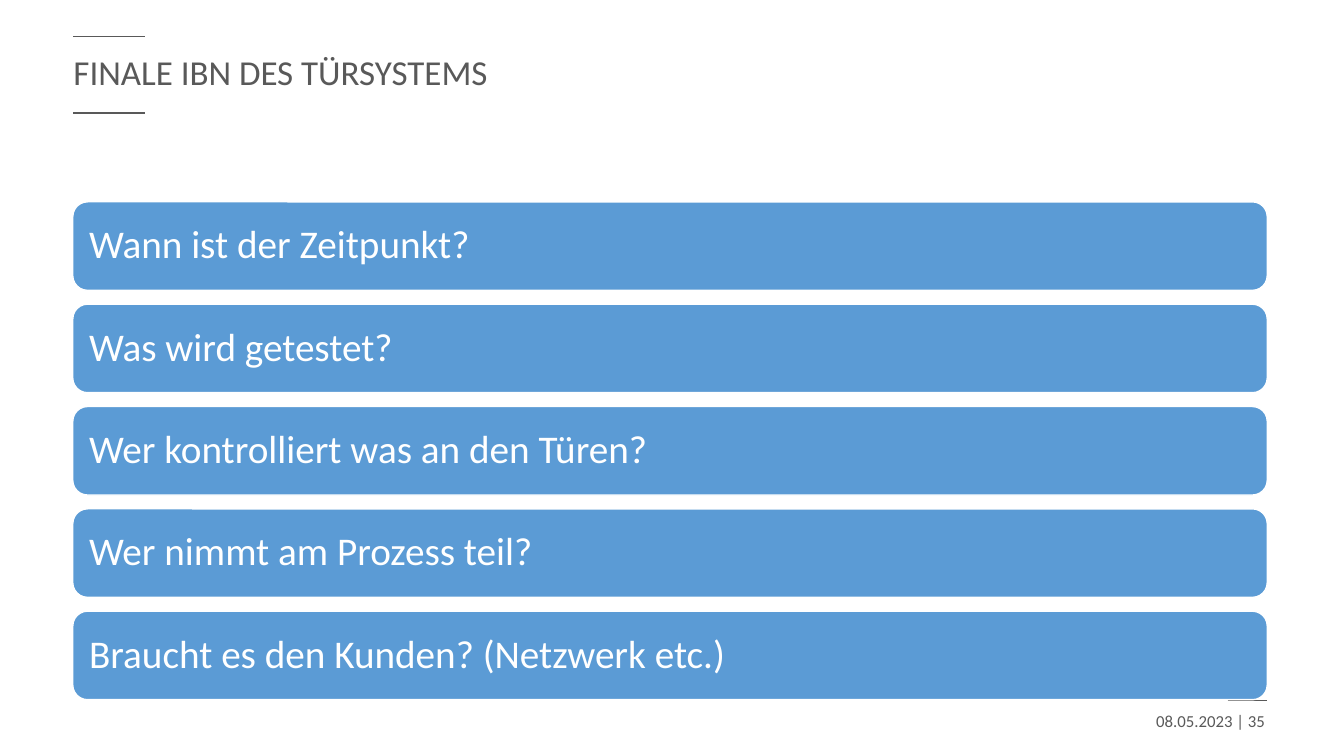
from pptx import Presentation
from pptx.dml.color import RGBColor
from pptx.enum.shapes import MSO_CONNECTOR, MSO_SHAPE
from pptx.enum.text import MSO_ANCHOR, PP_ALIGN
from pptx.oxml.ns import qn
from pptx.util import Pt
from lxml.etree import SubElement

TITLE = "FINALE IBN DES TÜRSYSTEMS"
FOOTER = "08.05.2023 | 35"
QUESTIONS = [
    "Wann ist der Zeitpunkt?",
    "Was wird getestet?",
    "Wer kontrolliert was an den Türen?",
    "Wer nimmt am Prozess teil?",
    "Braucht es den Kunden? (Netzwerk etc.)",
]
GREY, BLUE, WHITE = "595959", "5B9BD5", "FFFFFF"

# Lengths in points
SLIDE_W, SLIDE_H = 960, 540
RULES = [(876.9, 905, 500.4), (52.5, 103.7, 80.6), (52.5, 103.7, 25.9)]  # x1, x2, y
TITLE_BOX = (45.4, 25.9, 720.7, 54.7)
FOOTER_BOX = (694.8, 500.4, 216, 28.8)
BAR_X, BAR_Y, BAR_W, BAR_H, BAR_PITCH = 52, 144.2, 853.2, 63.2, 73.1
BAR_INSET = 8.6


def color(value):
    return RGBColor.from_string(value)


def write(sp, text, size, hue, align=PP_ALIGN.LEFT, spacing=1.0, **frame):
    tf = sp.text_frame
    frame = {"word_wrap": True, "vertical_anchor": MSO_ANCHOR.MIDDLE, **frame}
    for name, value in frame.items():
        setattr(tf, name, value)
    p = tf.paragraphs[0]
    p.alignment, p.line_spacing = align, spacing
    r = p.add_run()
    r.text = text
    for name, value in {"name": "Calibri", "size": Pt(size)}.items():
        setattr(r.font, name, value)
    r.font.color.rgb = color(hue)


def add_text(s, box, *args, **fmt):
    write(s.shapes.add_textbox(*map(Pt, box)), *args, **fmt)


def add_rule(s, x1, x2, y):
    line = s.shapes.add_connector(MSO_CONNECTOR.STRAIGHT, Pt(x1), Pt(y), Pt(x2), Pt(y))
    line.line.color.rgb = color(GREY)
    line.line.width = Pt(1)
    SubElement(line._element.spPr, qn("a:effectLst"))


def add_bar(s, y, text):
    sp = s.shapes.add_shape(MSO_SHAPE.ROUNDED_RECTANGLE, *map(Pt, (BAR_X, y, BAR_W, BAR_H)))
    sp.shadow.inherit = False
    sp.fill.solid()
    sp.fill.fore_color.rgb = color(BLUE)
    sp.line.color.rgb = color(WHITE)
    sp.line.width = Pt(1)
    margins = {f"margin_{side}": Pt(BAR_INSET) for side in ("left", "top", "right", "bottom")}
    write(sp, text, 28, WHITE, spacing=0.9, **margins)


def main():
    prs = Presentation()
    prs.slide_width, prs.slide_height = Pt(SLIDE_W), Pt(SLIDE_H)
    s = prs.slides.add_slide(prs.slide_layouts[6])
    for rule in RULES:
        add_rule(s, *rule)
    add_text(s, FOOTER_BOX, FOOTER, 12, GREY, align=PP_ALIGN.RIGHT)
    add_text(s, TITLE_BOX, TITLE, 25, GREY, spacing=0.9)
    for i, question in enumerate(QUESTIONS):
        add_bar(s, BAR_Y + i * BAR_PITCH, question)
    prs.save("out.pptx")


if __name__ == "__main__":
    main()
